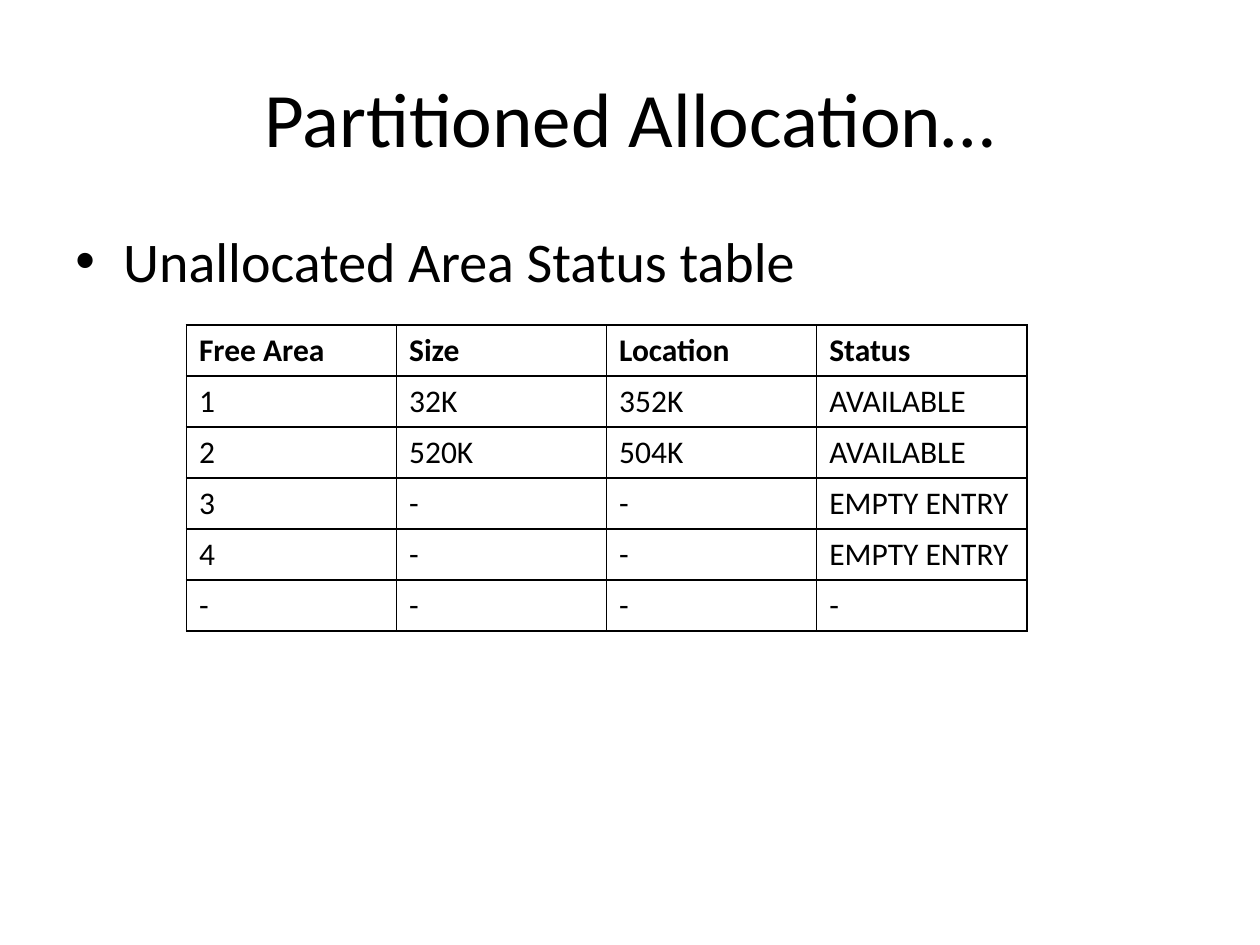
from lxml.etree import SubElement
from pptx import Presentation
from pptx.dml.color import RGBColor
from pptx.enum.text import MSO_ANCHOR as Anchor, PP_ALIGN as Align
from pptx.oxml.ns import qn
from pptx.util import Inches, Pt

BLACK, WHITE = "000000", "FFFFFF"
STATUS_ROWS = [
    ["Free Area", "Size", "Location", "Status"],
    ["1", "32K", "352K", "AVAILABLE"],
    ["2", "520K", "504K", "AVAILABLE"],
    ["3", "-", "-", "EMPTY ENTRY"],
    ["4", "-", "-", "EMPTY ENTRY"],
    ["-", "-", "-", "-"],
]


def color(value):
    """Turn a hex string into a colour."""
    return RGBColor.from_string(value)


def write(frame, text, size, bold=False, align=Align.LEFT):
    """Fill a text frame with one formatted paragraph and return it."""
    para = frame.paragraphs[0]
    para.alignment = align
    span = para.add_run()
    span.text = text
    font_format = {"name": "Calibri", "size": Pt(size), "bold": bold}
    for name, value in font_format.items():
        setattr(span.font, name, value)
    span.font.color.rgb = color(BLACK)
    return para


def add_text(page, box, text, size, anchor, align=Align.LEFT):
    """Place a wrapped text box and return its paragraph."""
    frame = page.shapes.add_textbox(*map(Inches, box)).text_frame
    frame.word_wrap = True
    frame.vertical_anchor = anchor
    return write(frame, text, size, align=align)


def add_title(page, box):
    """Place the centred title."""
    add_text(page, box, "Partitioned Allocation…", 44, Anchor.MIDDLE, Align.CENTER)


def add_body(page, box):
    """Place the bulleted line with its hanging indent."""
    para = add_text(page, box, "Unallocated Area Status table", 32, Anchor.TOP)
    props = para._p.get_or_add_pPr()
    indent = Inches(0.38)
    props.set("marL", str(indent))
    props.set("indent", str(-indent))
    SubElement(props, qn("a:buFont"), typeface="Arial")
    SubElement(props, qn("a:buChar"), char="•")


def style_cell(cell):
    """Give a cell black one-point borders and a white fill."""
    props = cell._tc.get_or_add_tcPr()
    for side in ("a:lnL", "a:lnR", "a:lnT", "a:lnB"):
        line = SubElement(props, qn(side), w=str(Pt(1)))
        SubElement(SubElement(line, qn("a:solidFill")), qn("a:srgbClr"), val=BLACK)
    cell.fill.solid()
    cell.fill.fore_color.rgb = color(WHITE)


def add_status_table(page, box, rows):
    """Place the status table with a bold header row."""
    size = len(rows), len(rows[0])
    table = page.shapes.add_table(*size, *map(Inches, box)).table
    for row_index, row in enumerate(rows):
        for column_index, text in enumerate(row):
            cell = table.cell(row_index, column_index)
            style_cell(cell)
            write(cell.text_frame, text, 18, bold=row_index == 0)


def main():
    """Build and save the deck."""
    deck = Presentation()
    deck.slide_width, deck.slide_height = Inches(10), Inches(7.5)
    page = deck.slides.add_slide(deck.slide_layouts[6])
    add_title(page, (0.5, 0.3, 9, 1.25))
    add_body(page, (0.5, 1.75, 9, 4.95))
    add_status_table(page, (1.48, 2.58, 6.67, 2.43), STATUS_ROWS)
    deck.save("out.pptx")


if __name__ == "__main__":
    main()
